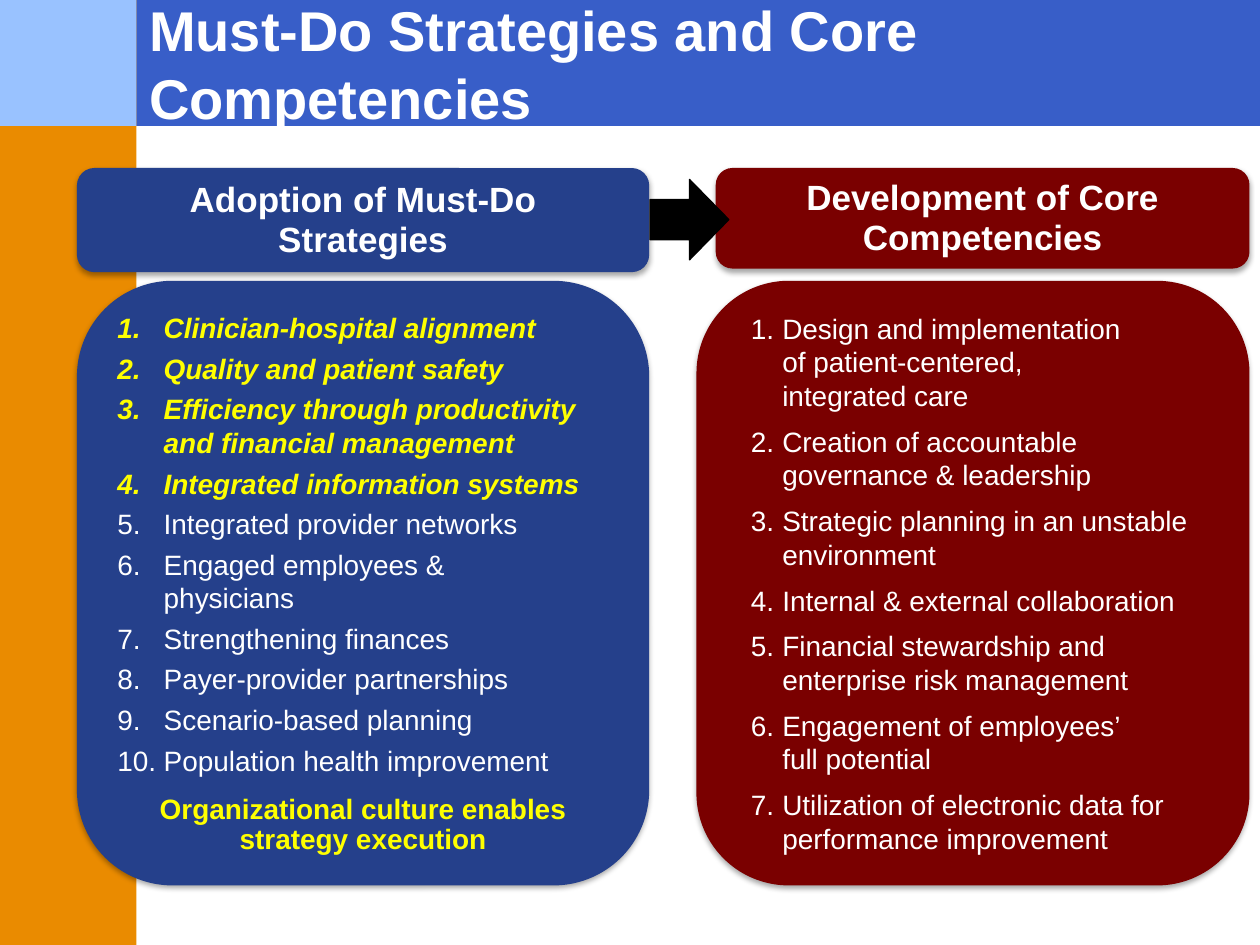
from lxml import etree
from pptx import Presentation
from pptx.dml.color import RGBColor
from pptx.enum.shapes import MSO_SHAPE
from pptx.enum.text import MSO_ANCHOR, MSO_AUTO_SIZE, PP_ALIGN
from pptx.oxml import parse_xml
from pptx.oxml.ns import nsdecls, qn
from pptx.util import Pt

RECTANGLE = MSO_SHAPE.RECTANGLE
ROUNDED = MSO_SHAPE.ROUNDED_RECTANGLE
RIGHT_ARROW = MSO_SHAPE.RIGHT_ARROW
LEFT, CENTER = PP_ALIGN.LEFT, PP_ALIGN.CENTER
TOP, MIDDLE = MSO_ANCHOR.TOP, MSO_ANCHOR.MIDDLE

FONT = "Arial"
WHITE, YELLOW, BLACK = "FFFFFF", "FFFF00", "000000"
BLUE, ORANGE, LIGHT_BLUE = "385EC8", "EA8B00", "99C2FF"
NAVY, MAROON = "25408B", "7A0000"

STRATEGIES = [
    "Clinician-hospital alignment",
    "Quality and patient safety",
    "Efficiency through productivity\vand financial management",
    "Integrated information systems",
    "Integrated provider networks",
    "Engaged employees &\vphysicians",
    "Strengthening finances",
    "Payer-provider partnerships",
    "Scenario-based planning",
    "Population health improvement",
]
HIGHLIGHTED = 4
CONCLUSION = "Organizational culture enables strategy execution"
COMPETENCIES = [
    "Design and implementation\vof patient-centered,\vintegrated care",
    "Creation of accountable governance & leadership",
    "Strategic planning in an unstable environment",
    "Internal & external collaboration",
    "Financial stewardship and enterprise risk management",
    "Engagement of employees’\vfull potential",
    "Utilization of electronic data for performance improvement",
]


def color(value):
    return RGBColor.from_string(value)


class SlideBuilder:
    def __init__(self, slide):
        self.slide = slide

    def style(self, paragraph, size, fill=WHITE, bold=False, italic=False):
        for run in paragraph.runs:
            font = run.font
            font.name, font.size = FONT, Pt(size)
            font.bold, font.italic = bold, italic
            font.color.rgb = color(fill)

    def shape(self, kind, left, top, width, height, fill):
        shape = self.slide.shapes.add_shape(
            kind, Pt(left), Pt(top), Pt(width), Pt(height))
        shape.shadow.inherit = False
        shape.fill.solid()
        shape.fill.fore_color.rgb = color(fill)
        shape.line.fill.background()
        return shape

    def title(self, text, left, top, width, height):
        title = self.slide.shapes.title
        title.left, title.top = Pt(left), Pt(top)
        title.width, title.height = Pt(width), Pt(height)
        frame = title.text_frame
        frame.text = text
        frame.word_wrap = True
        frame.auto_size = MSO_AUTO_SIZE.NONE
        frame.vertical_anchor = TOP
        frame.paragraphs[0].alignment = LEFT
        self.style(frame.paragraphs[0], 32, bold=True)
        # Bring the title in front of the bands
        title._element.getparent().append(title._element)

    def panel(self, left, top, width, height, fill):
        panel = self.shape(ROUNDED, left, top, width, height, fill)
        panel.adjustments[0] = 0.167
        effects = panel._element.spPr.find(qn("a:effectLst"))
        effects.append(parse_xml(
            f'<a:outerShdw {nsdecls("a")} blurRad="{Pt(3.1)}" dist="{Pt(1.8)}" '
            'dir="5400000" rotWithShape="0"><a:srgbClr val="000000">'
            '<a:alpha val="35000"/></a:srgbClr></a:outerShdw>'))
        frame = panel.text_frame
        frame.word_wrap = True
        frame.vertical_anchor = MIDDLE
        return panel

    def header(self, text, left, top, width, height, fill):
        frame = self.panel(left, top, width, height, fill).text_frame
        frame.text = text
        for paragraph in frame.paragraphs:
            paragraph.alignment = CENTER
            paragraph.line_spacing = 0.95
            self.style(paragraph, 20, bold=True)

    def numbered_panel(self, items, left, top, width, height, fill,
                       margin, hanging, gap):
        frame = self.panel(left, top, width, height, fill).text_frame
        frame.margin_top = frame.margin_bottom = Pt(1.5)
        for index, item in enumerate(items):
            paragraph = frame.add_paragraph() if index else frame.paragraphs[0]
            paragraph.text = item
            paragraph.alignment = LEFT
            paragraph.space_after = Pt(gap)
            properties = paragraph._p.get_or_add_pPr()
            properties.set("marL", str(Pt(margin)))
            properties.set("indent", str(Pt(-hanging)))
            etree.SubElement(properties, qn("a:buFont"), typeface=FONT)
            etree.SubElement(properties, qn("a:buAutoNum"), type="arabicPeriod")
            self.style(paragraph, 16)
        return frame


def main():
    presentation = Presentation()
    presentation.slide_width, presentation.slide_height = Pt(720), Pt(540)
    builder = SlideBuilder(
        presentation.slides.add_slide(presentation.slide_layouts[5]))

    # Bands and title
    builder.shape(RECTANGLE, 0, 0, 720, 72, BLUE)
    builder.shape(RECTANGLE, 0, 0, 78, 540, ORANGE)
    builder.shape(RECTANGLE, 0, 0, 78, 72, LIGHT_BLUE)
    builder.title("Must-Do Strategies and Core Competencies", 78, -6, 642, 72)

    # Strategies list, with the leading items highlighted
    strategies = builder.numbered_panel(
        STRATEGIES, 44, 160.5, 327, 345.5, NAVY, 26.5, 26.5, 4)
    for paragraph in strategies.paragraphs[:HIGHLIGHTED]:
        builder.style(paragraph, 16, YELLOW, bold=True, italic=True)
    # The first number is smaller than its text
    first_properties = strategies.paragraphs[0]._p.pPr
    number_size = etree.Element(qn("a:buSzPts"), val="1400")
    first_properties.find(qn("a:buFont")).addprevious(number_size)
    strategies.paragraphs[-1].space_after = Pt(10.5)
    conclusion = strategies.add_paragraph()
    conclusion.text = CONCLUSION
    conclusion.alignment = CENTER
    conclusion.line_spacing = 0.9
    builder.style(conclusion, 16, YELLOW, bold=True)

    # Competencies list
    builder.numbered_panel(
        COMPETENCIES, 398, 160.5, 316, 345.5, MAROON, 26.5, 18, 7)

    # Headers and the arrow between them
    builder.header("Development of Core Competencies", 409, 96, 305, 57.5, MAROON)
    builder.header("Adoption of Must-Do\nStrategies", 44, 96, 327, 59.5, NAVY)
    arrow = builder.shape(RIGHT_ARROW, 371.5, 102.5, 45, 46, BLACK)
    arrow.line.color.rgb = color(BLACK)
    arrow.line.width = Pt(0.75)

    presentation.save("out.pptx")


if __name__ == "__main__":
    main()
